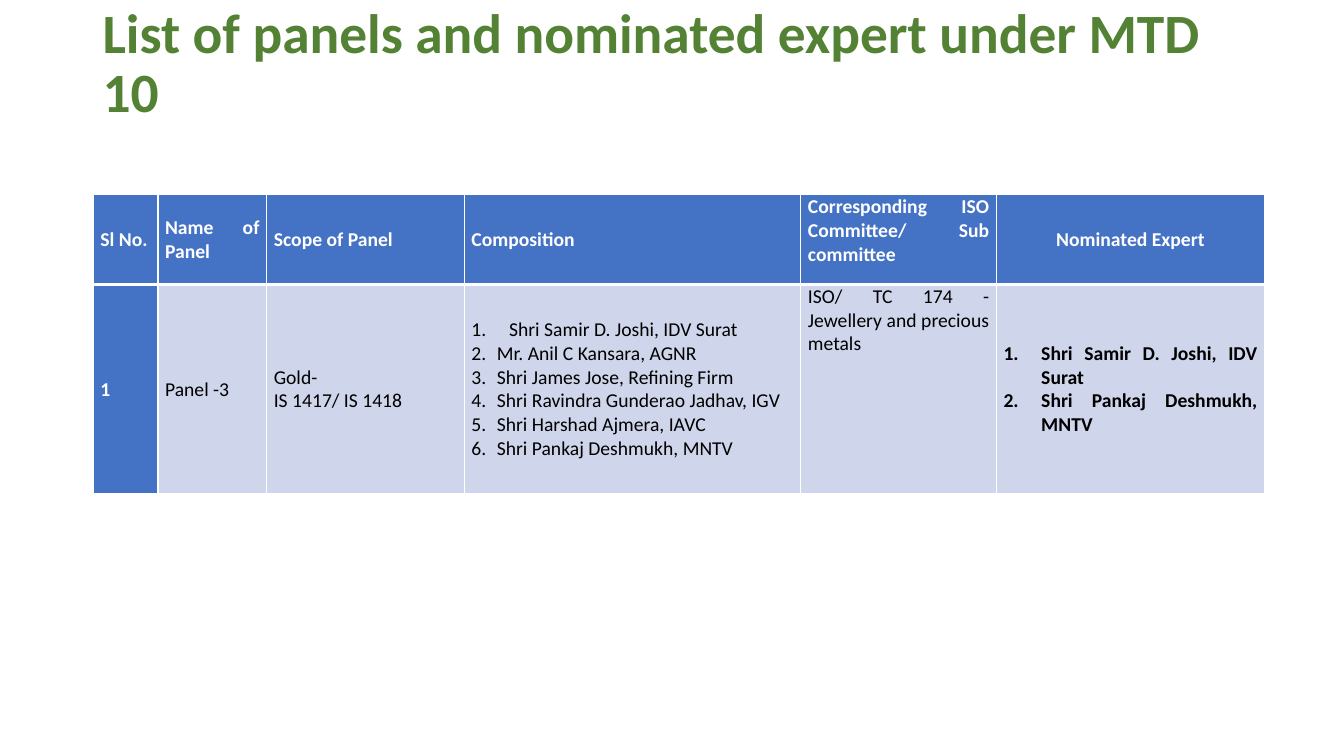
from lxml.etree import SubElement
from pptx import Presentation
from pptx.dml.color import RGBColor
from pptx.enum.text import MSO_ANCHOR as ANCHOR, MSO_AUTO_SIZE as FIT, PP_ALIGN as ALIGN
from pptx.oxml.ns import qn
from pptx.util import Cm, Pt

COLORS = {"title": "548235", "head": "4472C4", "body": "CFD5EA",
          "light": "FFFFFF", "dark": "000000"}
WIDTHS = [1.63, 2.74, 4.98, 8.48, 4.93, 6.76]
HEIGHTS = [2.26, 5.28]
WIDE, NARROW = 0.95, 0.64
HEADERS = ["Sl No.", "Name of Panel", "Scope of Panel", "Composition",
           "Corresponding ISO Committee/ Sub committee", "Nominated Expert"]
MEMBERS = ["Shri Samir D. Joshi, IDV Surat", "Mr. Anil C Kansara, AGNR",
           "Shri James Jose, Refining Firm", "Shri Ravindra Gunderao Jadhav, IGV",
           "Shri Harshad Ajmera, IAVC", "Shri Pankaj Deshmukh, MNTV"]


def rgb(name):
    """Return the named colour."""
    return RGBColor.from_string(COLORS[name])


def set_attrs(obj, **values):
    """Set several attributes on one object."""
    for name, value in values.items():
        setattr(obj, name, value)


def add_run(p, text, size, color, bold):
    """Add one formatted run to a paragraph."""
    r = p.add_run()
    r.text = text
    set_attrs(r.font, name="Calibri", size=Pt(size), bold=bold)
    r.font.color.rgb = rgb(color)


def number(p, indent):
    """Turn a paragraph into a numbered item with a hanging indent."""
    pPr = p._p.get_or_add_pPr()
    pPr.set("marL", str(Cm(indent)))
    pPr.set("indent", str(-Cm(indent)))
    SubElement(pPr, qn("a:buFont"), typeface="+mj-lt")
    SubElement(pPr, qn("a:buAutoNum"), type="arabicPeriod")


def set_borders(cell, **widths):
    """Draw the white borders of a cell, widths in points."""
    tcPr = cell._tc.get_or_add_tcPr()
    for side in "LRTB":
        ln = SubElement(tcPr, qn(f"a:ln{side}"), w=str(Pt(widths.get(side, 1))))
        fill = SubElement(ln, qn("a:solidFill"))
        SubElement(fill, qn("a:srgbClr"), val=COLORS["light"])


def fill_cell(cell, lines, fill, color, bold, align=ALIGN.JUSTIFY,
              anchor=ANCHOR.MIDDLE, indents=()):
    """Write the paragraphs of a cell and set its look."""
    set_attrs(cell, margin_left=Cm(0.18), margin_right=Cm(0.18),
              margin_top=0, margin_bottom=0, vertical_anchor=anchor)
    cell.fill.solid()
    cell.fill.fore_color.rgb = rgb(fill)
    tf = cell.text_frame
    for i, line in enumerate(lines):
        p = tf.add_paragraph() if i else tf.paragraphs[0]
        p.alignment = align
        if indents:
            number(p, indents[i])
        add_run(p, line, 14, color, bold)


def add_title(s, text):
    """Place and format the slide title."""
    sp = s.shapes.title
    set_attrs(sp, left=Cm(2.33), top=Cm(1.02), width=Cm(29.21), height=Cm(1.24))
    tf = sp.text_frame
    set_attrs(tf, word_wrap=True, auto_size=FIT.NONE, vertical_anchor=ANCHOR.MIDDLE)
    p = tf.paragraphs[0]
    set_attrs(p, alignment=ALIGN.LEFT, line_spacing=0.9)
    add_run(p, text, 39.6, "title", True)


def add_panel_table(s):
    """Add the table of panels and experts."""
    table = s.shapes.add_table(len(HEIGHTS), len(WIDTHS), Cm(2.35), Cm(4.91),
                               Cm(sum(WIDTHS)), Cm(sum(HEIGHTS))).table
    for column, width in zip(table.columns, WIDTHS):
        column.width = Cm(width)
    for row, height in zip(table.rows, HEIGHTS):
        row.height = Cm(height)
    top = {"anchor": ANCHOR.TOP}
    head_formats = {4: top, 5: {"align": ALIGN.CENTER}}
    for i, header in enumerate(HEADERS):
        cell = table.cell(0, i)
        set_borders(cell, B=3)
        fill_cell(cell, [header], "head", "light", True, **head_formats.get(i, {}))
    body = [
        (["1"], {"fill": "head", "color": "light", "bold": True}),
        (["Panel -3"], {}),
        (["Gold-", "IS 1417/ IS 1418"], {"align": ALIGN.LEFT}),
        (MEMBERS, {"indents": [WIDE] + [NARROW] * 5}),
        (["ISO/ TC 174 - Jewellery and precious metals"], top),
        ([MEMBERS[0], MEMBERS[-1]], {"bold": True, "indents": [WIDE] * 2}),
    ]
    plain = {"fill": "body", "color": "dark", "bold": False}
    for i, (lines, formats) in enumerate(body):
        cell = table.cell(1, i)
        set_borders(cell, T=3)
        fill_cell(cell, lines, **{**plain, **formats})


def main():
    """Build and save the slide."""
    prs = Presentation()
    set_attrs(prs, slide_width=Cm(33.87), slide_height=Cm(19.05))
    s = prs.slides.add_slide(prs.slide_layouts[5])
    add_title(s, "List of panels and nominated expert under MTD 10")
    add_panel_table(s)
    prs.save("out.pptx")


if __name__ == "__main__":
    main()
